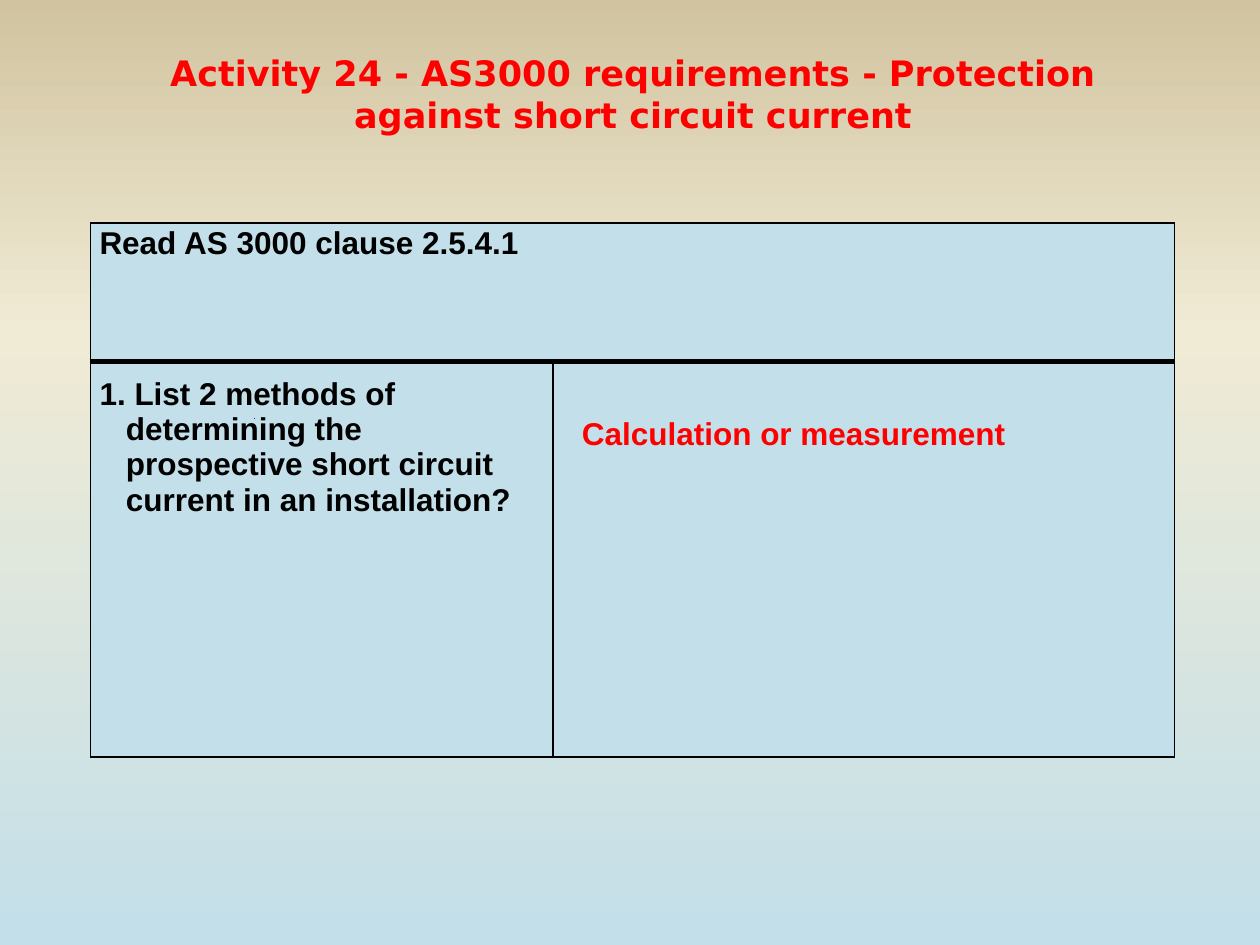
from copy import deepcopy

from lxml import etree
from pptx import Presentation
from pptx.dml.color import RGBColor
from pptx.enum.shapes import MSO_SHAPE
from pptx.enum.text import MSO_AUTO_SIZE, PP_ALIGN
from pptx.oxml.ns import qn
from pptx.util import Pt

RECT = MSO_SHAPE.RECTANGLE
CENTER, JUSTIFY, LEFT = PP_ALIGN.CENTER, PP_ALIGN.JUSTIFY, PP_ALIGN.LEFT
COLORS = {"sky": "C3DFE9", "cream": "F0EBD5", "sand": "D1C39F",
          "black": "000000", "red": "FF0000"}


def rgb(name):
    return RGBColor.from_string(COLORS[name])


def write(tf, text, size, color, align, font="Arial"):
    tf.word_wrap = True
    tf.text = text
    p = tf.paragraphs[0]
    p.alignment = align
    f = p.runs[0].font
    f.name, f.size, f.bold = font, Pt(size), True
    f.color.rgb = rgb(color)
    return p


prs = Presentation()
prs.slide_width, prs.slide_height = Pt(720), Pt(540)
s = prs.slides.add_slide(prs.slide_layouts[6])

# Background gradient, from the bottom up
fill = s.background.fill
fill.gradient()
fill.gradient_angle = 90
gs_list = s.element.find(".//" + qn("a:gsLst"))
gs_list.append(deepcopy(gs_list[0]))
stops = [("sky", 0), ("cream", 0.65), ("sand", 1)]
for stop, (color, position) in zip(fill.gradient_stops, stops):
    stop.color.rgb = rgb(color)
    stop.position = position

# Question table
table = s.shapes.add_table(2, 2, Pt(51.84), Pt(127.44), Pt(619.2), Pt(305.28)).table
table.first_row = table.horz_banding = False
for column, width in zip(table.columns, (264.24, 354.96)):
    column.width = Pt(width)
for row, height in zip(table.rows, (79.2, 226.08)):
    row.height = Pt(height)

for i, row in enumerate(table.rows):
    margin = (1.44, 8.64)[i]
    for cell in row.cells:
        cell.margin_left = cell.margin_right = Pt(5.04)
        cell.margin_top = cell.margin_bottom = Pt(margin)
        cell.fill.solid()
        cell.fill.fore_color.rgb = rgb("sky")
        # Thin borders, with a thick rule between the rows
        widths = {"lnL": 1, "lnR": 1, "lnT": (1, 3)[i], "lnB": (3, 1)[i]}
        tc_pr = cell._tc.get_or_add_tcPr()
        for n, (side, width) in enumerate(widths.items()):
            ln = etree.Element(qn("a:" + side), w=str(Pt(width)))
            solid = etree.SubElement(ln, qn("a:solidFill"))
            etree.SubElement(solid, qn("a:srgbClr"), val=COLORS["black"])
            tc_pr.insert(n, ln)

table.cell(0, 0).merge(table.cell(0, 1))
p = write(table.cell(0, 0).text_frame, "Read AS 3000 clause 2.5.4.1",
          18, "black", JUSTIFY)
p.space_before = Pt(6)
p = write(table.cell(1, 0).text_frame,
          "1. List 2 methods of determining the prospective short circuit "
          "current in an installation?", 18, "black", LEFT)
p.space_before = Pt(6)
p_pr = p._p.get_or_add_pPr()
p_pr.set("marL", str(Pt(15.12)))
p_pr.set("indent", str(Pt(-15.12)))

# Small dot
dot = s.shapes.add_shape(RECT, Pt(145.44), Pt(239.04), Pt(0), Pt(0))
dot.shadow.inherit = False
dot.fill.solid()
dot.fill.fore_color.rgb = rgb("sky")
dot.line.color.rgb = rgb("black")
dot.line.width = Pt(0.75)

# Title and answer
texts = [
    (46.8, 25.92, 630, 55.44, 20, CENTER, "DejaVu Sans",
     "Activity 24 - AS3000 requirements - Protection against short circuit current"),
    (325.44, 233.28, 313.2, 28.8, 18, LEFT, "Arial", "Calculation or measurement"),
]
for x, y, w, h, size, align, font, text in texts:
    tf = s.shapes.add_textbox(Pt(x), Pt(y), Pt(w), Pt(h)).text_frame
    write(tf, text, size, "red", align, font)
    tf.auto_size = MSO_AUTO_SIZE.SHAPE_TO_FIT_TEXT

prs.save("out.pptx")
